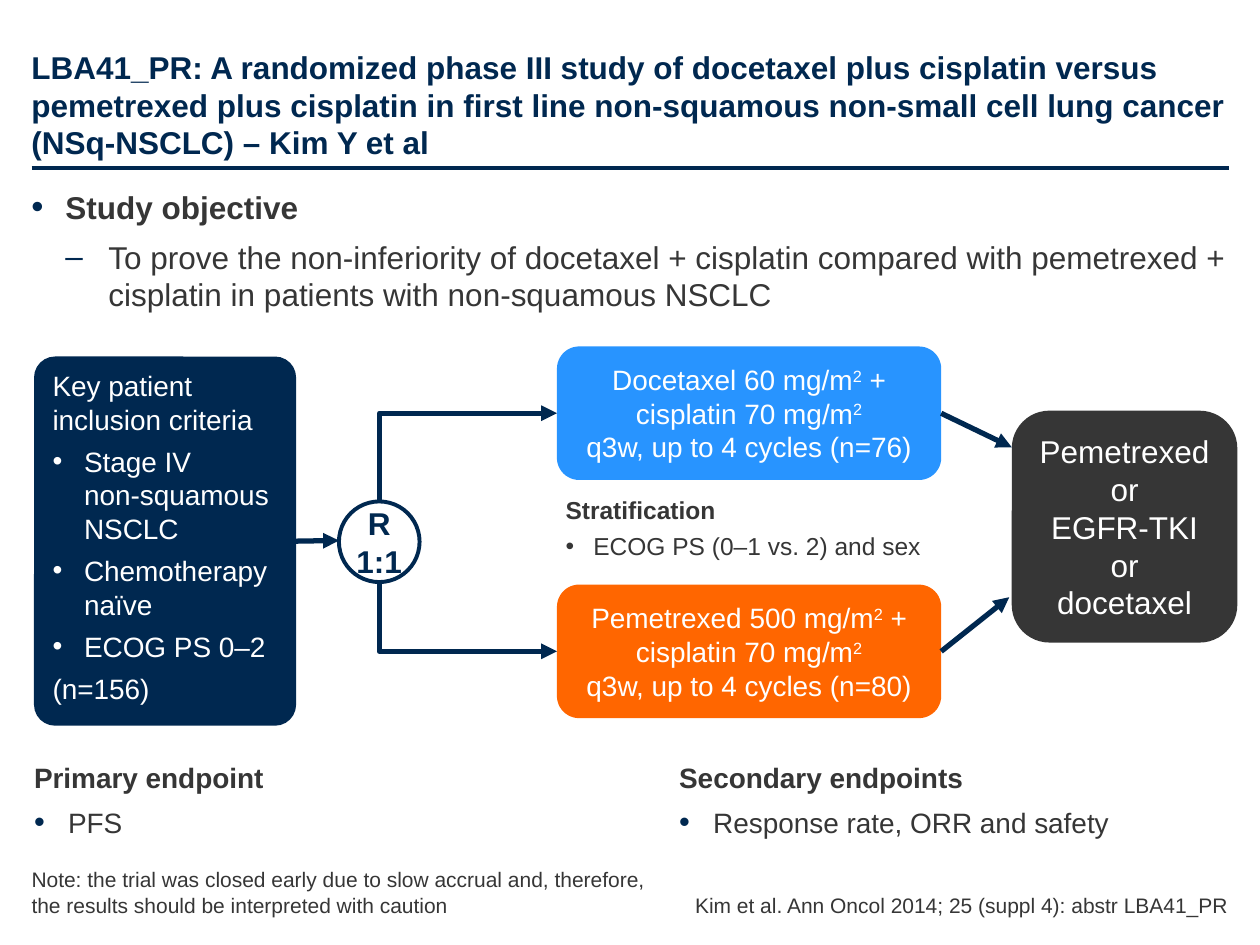
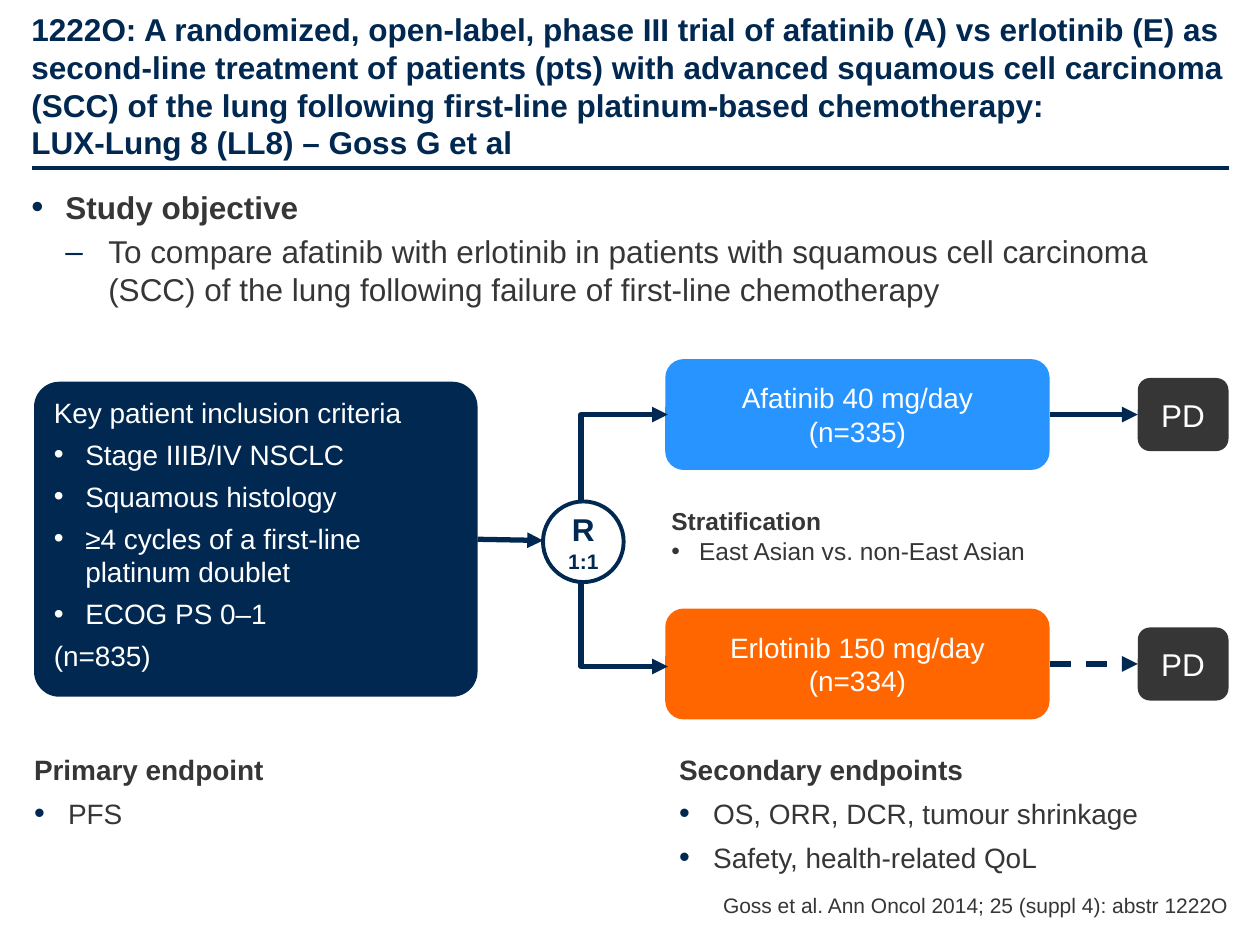
from lxml import etree
from pptx import Presentation
from pptx import util as u
from pptx.dml import color
from pptx.enum import dml, shapes, text
from pptx.oxml import ns

SCALE = 9144  # EMU per px, 100 px to the inch
FONT = "Arial"
NAVY, GREY, WHITE = "002850", "363636", "FFFFFF"
BLUE, ORANGE = "2894FF", "FF6600"
MIDDLE, BOTTOM = text.MSO_ANCHOR.MIDDLE, text.MSO_ANCHOR.BOTTOM
CENTER, RIGHT = text.PP_ALIGN.CENTER, text.PP_ALIGN.RIGHT
RIGHT_SIDE, LEFT_SIDE = 3, 1

# Bullets: character, text indent, hanging, colour, size in percent
MAIN = ("•", 27, 27, NAVY, 110)
SUB = ("–", 61, 34, NAVY, 100)
LISTED = ("•", 25, 25, WHITE, 100)
SMALL = ("•", 22, 22, GREY, 100)


def px(length):
    return u.Emu(round(length * SCALE))


def rgb(value):
    return color.RGBColor.from_string(value)


def apply(target, values):
    for name, value in values.items():
        setattr(target, name, value)


def add_xml(parent, tag, **attributes):
    return etree.SubElement(parent, ns.qn(tag), attributes)


class Painter:
    """Holds the shared style and the current slide."""

    def __init__(self):
        self.deck = Presentation()
        apply(self.deck, {"slide_width": px(1000), "slide_height": px(750)})
        self.page = None

    # Text
    def set_text(self, frame, paras, size=16, ink=GREY, bold=False, align=None,
                 after=0, anchor=text.MSO_ANCHOR.TOP, margins=(0, 5, 0, 5), wrap=True):
        left, top, right, bottom = map(px, margins)
        apply(frame, {"word_wrap": wrap, "vertical_anchor": anchor,
                      "margin_left": left, "margin_top": top,
                      "margin_right": right, "margin_bottom": bottom})
        for index, entry in enumerate(paras):
            words, style = entry if isinstance(entry, tuple) else (entry, {})
            para = frame.paragraphs[0] if index == 0 else frame.add_paragraph()
            if "bullet" in style:
                self.bullet(para, *style["bullet"])
            apply(para, {"alignment": align, "space_after": u.Pt(after)})
            self.spans(para, words, {"name": FONT, "size": u.Pt(style.get("size", size)),
                                     "bold": style.get("bold", bold)}, ink)

    def spans(self, para, words, font, ink):
        """Text between two ^ signs is raised."""
        for index, part in enumerate(words.split("^")):
            for number, line in enumerate(part.split("\n")):
                if number:
                    para.add_line_break()
                if not line:
                    continue
                span = para.add_run()
                span.text = line
                apply(span.font, font)
                span.font.color.rgb = rgb(ink)
                if index % 2:
                    span.font._element.set("baseline", "30000")

    def bullet(self, para, sign, indent, hanging, ink, percent):
        props = para._p.get_or_add_pPr()
        props.set("marL", str(px(indent)))
        props.set("indent", str(-px(hanging)))
        add_xml(add_xml(props, "a:buClr"), "a:srgbClr", val=ink)
        add_xml(props, "a:buSzPct", val=str(percent * 1000))
        add_xml(props, "a:buFont", typeface=FONT)
        add_xml(props, "a:buChar", char=sign)

    def label(self, area, paras, **style):
        box = self.page.shapes.add_textbox(*map(px, area))
        self.set_text(box.text_frame, paras, **style)

    # Shapes
    def shape(self, kind, area, fill=None, line=None):
        box = self.page.shapes.add_shape(kind, *map(px, area))
        box.shadow.inherit = False
        if fill:
            box.fill.solid()
            box.fill.fore_color.rgb = rgb(fill)
        else:
            box.fill.background()
        if line:
            box.line.color.rgb = rgb(line)
            box.line.width = u.Pt(2.25)
        else:
            box.line.fill.background()
        return box

    def card(self, area, fill, paras, size=16):
        box = self.shape(shapes.MSO_SHAPE.ROUNDED_RECTANGLE, area, fill)
        self.set_text(box.text_frame, paras, size=size, ink=WHITE, align=CENTER,
                      anchor=MIDDLE, margins=(10, 0, 10, 0))
        return box

    def criteria(self, area, items, total):
        box = self.shape(shapes.MSO_SHAPE.ROUNDED_RECTANGLE, area, NAVY)
        box.adjustments[0] = 0.08
        paras = ["Key patient inclusion criteria",
                 *((item, {"bullet": LISTED}) for item in items), total]
        self.set_text(box.text_frame, paras, ink=WHITE, after=4.8,
                      align=text.PP_ALIGN.LEFT, margins=(10, 5, 10, 5))
        return box

    def randomisation(self, left, ratio_size):
        ring = self.shape(shapes.MSO_SHAPE.OVAL, (left, 398, 64, 64), line=NAVY)
        self.set_text(ring.text_frame, ["R", ("1:1", {"size": ratio_size})], size=18,
                      ink=NAVY, bold=True, align=CENTER, anchor=MIDDLE,
                      margins=(10, 5, 10, 5), wrap=False)

    # Lines
    def connector(self, kind, begin, end, width=3, arrow=True):
        line = self.page.shapes.add_connector(kind, *map(px, (*begin, *end)))
        line.line.color.rgb = rgb(NAVY)
        line.line.width = u.Pt(width)
        if arrow:
            outline = line._element.spPr.find(ns.qn("a:ln"))
            add_xml(outline, "a:tailEnd", type="triangle")
        add_xml(line._element.spPr, "a:effectLst")
        return line

    def arrow(self, source, target, dashed=False):
        """Runs from the right side of a box to a point or the left side of a box."""
        point = target if isinstance(target, tuple) else (0, 0)
        line = self.connector(shapes.MSO_CONNECTOR.STRAIGHT, (0, 0), point)
        line.begin_connect(source, RIGHT_SIDE)
        if point is not target:
            line.end_connect(target, LEFT_SIDE)
        if dashed:
            line.line.dash_style = dml.MSO_LINE.DASH

    def branch(self, begin, end):
        """Goes up or down from begin, then right to end: a turned one-bend connector."""
        (x1, y1), (x2, y2) = begin, end
        mid_x, mid_y = (x1 + x2) / 2, (y1 + y2) / 2
        half_w, half_h = abs(y2 - y1) / 2, (x2 - x1) / 2
        upward = y2 < y1
        drop = half_h if upward else -half_h
        line = self.connector(shapes.MSO_CONNECTOR.ELBOW,
                              (mid_x + half_w, mid_y + drop),
                              (mid_x - half_w, mid_y - drop))
        props = line._element.spPr
        props.find(ns.qn("a:xfrm")).set("rot", str((90 if upward else 270) * 60000))
        props.find(ns.qn("a:prstGeom")).set("prst", "bentConnector2")

    # Parts of every slide
    def start(self, title, objective, gap, citation):
        self.page = self.deck.slides.add_slide(self.deck.slide_layouts[6])
        self.connector(shapes.MSO_CONNECTOR.STRAIGHT, (25, 133), (975, 133), 2.25, False)
        self.label((25, 25, 950, 103), [title], size=18, ink=NAVY, bold=True,
                   anchor=BOTTOM, margins=(0, 5, 0, 0))
        self.label((25, 144, 950, 120),
                   [("Study objective", {"bullet": MAIN, "bold": True}),
                    (objective, {"bullet": SUB})], size=18, after=gap)
        self.label((535, 708, 440, 20), [citation], size=12, align=RIGHT,
                   anchor=BOTTOM, margins=(0, 0, 0, 0))

    def stratification(self, area, factor, gap):
        self.label(area, [("Stratification", {"bold": True}), (factor, {"bullet": SMALL})],
                   size=14, after=gap, margins=(10, 5, 10, 5))

    def endpoints(self, top, primary, secondary):
        for left, width, heading, items in ((27, 332, "Primary endpoint", primary),
                                            (539, 439, "Secondary endpoints", secondary)):
            self.label((left, top, width, 92),
                       [(heading, {"bold": True}),
                        *((item, {"bullet": MAIN}) for item in items)], after=6)


def docetaxel_study(paint):
    paint.start("LBA41_PR: A randomized phase III study of docetaxel plus cisplatin versus "
                "pemetrexed plus cisplatin in first line non-squamous non-small cell lung "
                "cancer (NSq-NSCLC) – Kim Y et al",
                "To prove the non-inferiority of docetaxel + cisplatin compared with "
                "pemetrexed + cisplatin in patients with non-squamous NSCLC", 7,
                "Kim et al. Ann Oncol 2014; 25 (suppl 4): abstr LBA41_PR")
    # Patients and arms
    patients = paint.criteria((27, 283, 208, 293),
                              ["Stage IV\nnon-squamous NSCLC", "Chemotherapy naïve",
                               "ECOG PS 0–2"], "(n=156)")
    paint.randomisation(269, 18)
    dose = "{} mg/m^2^ +\ncisplatin 70 mg/m^2^\nq3w, up to 4 cycles (n={})"
    docetaxel, pemetrexed = (
        paint.card((442, top, 305, 106), fill, [dose.format(drug, count)])
        for top, fill, drug, count in ((275, BLUE, "Docetaxel 60", 76),
                                       (464, ORANGE, "Pemetrexed 500", 80)))
    paint.card((803, 326, 179, 184), GREY,
               ["Pemetrexed or\nEGFR-TKI or\ndocetaxel"], size=18)
    paint.stratification((439, 388, 308, 70), "ECOG PS (0–1 vs. 2) and sex", 4)
    # Flow
    paint.arrow(patients, (269, 429))
    paint.branch((301, 398), (442, 328))
    paint.branch((301, 461), (442, 517))
    paint.arrow(docetaxel, (803, 355))
    paint.arrow(pemetrexed, (801, 474))
    # Endpoints and note
    paint.endpoints(599, ["PFS"], ["Response rate, ORR and safety"])
    paint.label((25, 688, 501, 40),
                ["Note: the trial was closed early due to slow accrual and, therefore, "
                 "the results should be interpreted with caution"],
                size=12, anchor=BOTTOM, margins=(0, 0, 0, 0))


def afatinib_study(paint):
    paint.start("1222O: A randomized, open-label, phase III trial of afatinib (A) vs erlotinib "
                "(E) as second-line treatment of patients (pts) with advanced squamous cell "
                "carcinoma (SCC) of the lung following first-line platinum-based "
                "chemotherapy:\nLUX-Lung 8 (LL8) – Goss G et al",
                "To compare afatinib with erlotinib in patients with squamous cell carcinoma "
                "(SCC) of the lung following failure of first-line chemotherapy", 4,
                "Goss et al. Ann Oncol 2014; 25 (suppl 4): abstr 1222O")
    # Patients, arms and flow
    patients = paint.criteria((27, 303, 352, 250),
                              ["Stage IIIB/IV NSCLC", "Squamous histology",
                               "≥4 cycles of a first-line platinum doublet",
                               "ECOG PS 0–1"], "(n=835)")
    paint.randomisation(431, 12)
    paint.arrow(patients, (431, 429))
    for top, fill, drug, count, begin_y, end_y, dashed in (
            (285, BLUE, "Afatinib 40", 335, 397, 329, False),
            (483, ORANGE, "Erlotinib 150", 334, 461, 529, True)):
        arm = paint.card((528, top, 305, 88), fill, [f"{drug} mg/day", f"(n={count})"])
        progression = paint.card((903, top + 15, 72, 58), GREY, ["PD"], size=18)
        paint.branch((461, begin_y), (530, end_y))
        paint.arrow(arm, progression, dashed)
    paint.stratification((523, 397, 344, 66), "East Asian vs. non-East Asian", 0)
    # Endpoints
    paint.endpoints(592, ["PFS"],
                    ["OS, ORR, DCR, tumour shrinkage", "Safety, health-related QoL"])


def main():
    paint = Painter()
    docetaxel_study(paint)
    afatinib_study(paint)
    paint.deck.save("out.pptx")


if __name__ == "__main__":
    main()
